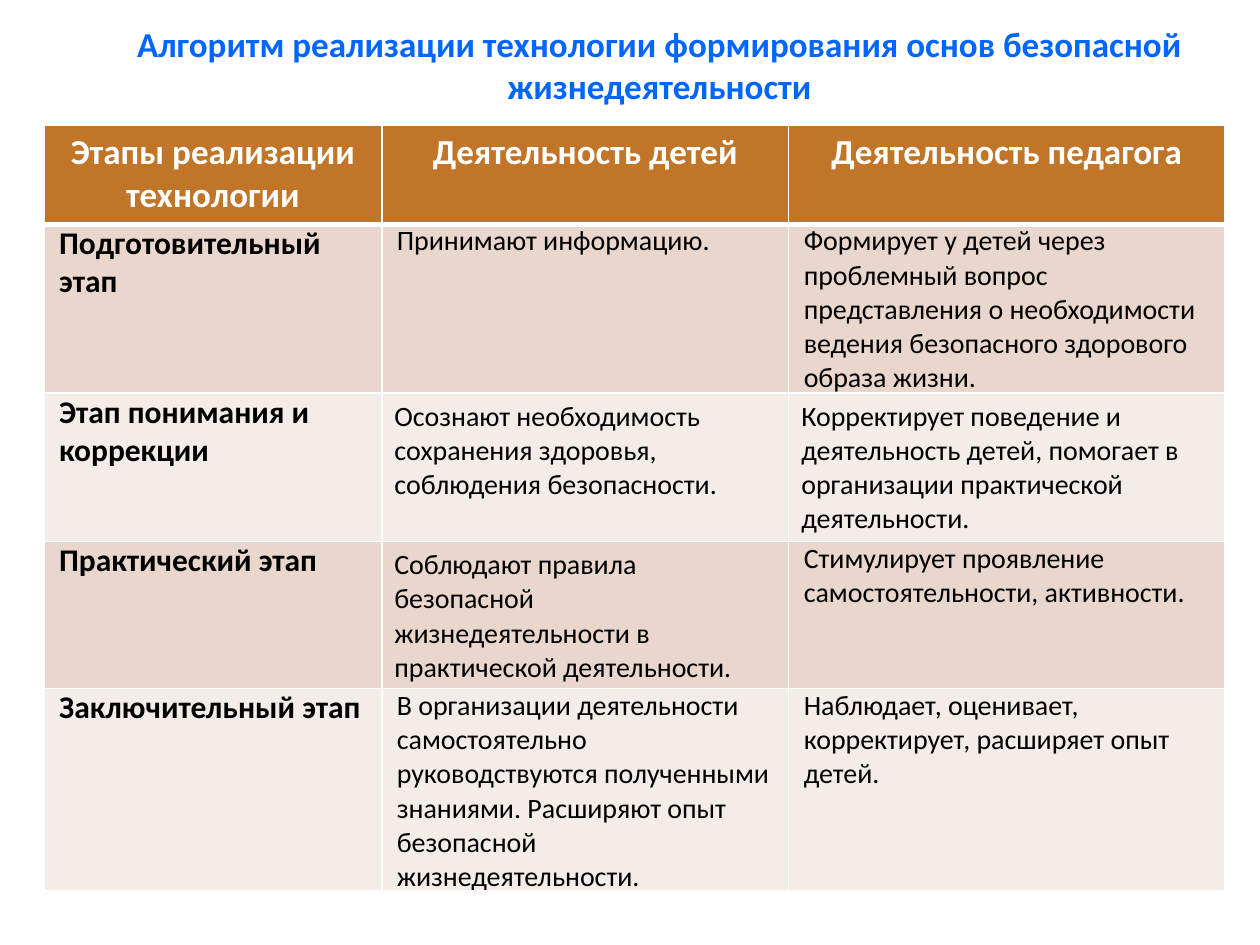
import dataclasses

import pptx
import pptx.dml.color
import pptx.enum.text
import pptx.oxml
import pptx.oxml.ns
import pptx.util

Inches = pptx.util.Inches
Pt = pptx.util.Pt
Align = pptx.enum.text.PP_ALIGN

COLORS = {
    "title": "0066FF",
    "header": "C17529",
    "dark_band": "E9D6CD",
    "light_band": "F4ECE8",
    "white": "FFFFFF",
    "black": "000000",
}
FONT = "Calibri"
COLUMN_WIDTHS = [2.68, 3.23, 3.46]


@dataclasses.dataclass(frozen=True)
class TextStyle:
    size: int
    bold: bool
    color: str
    alignment: Align = Align.LEFT


@dataclasses.dataclass(frozen=True)
class Stage:
    height: float
    texts: tuple[str, str, str]
    default_margin_columns: tuple[int, ...] = ()


TITLE_STYLE = TextStyle(20, True, "title", Align.CENTER)
HEADER_STYLE = TextStyle(20, True, "white", Align.CENTER)
STAGE_STYLE = TextStyle(18, True, "black")
BODY_STYLE = TextStyle(16, False, "black")

ROWS = [
    Stage(0.79, ("Этапы реализации технологии", "Деятельность детей",
                 "Деятельность педагога"), (0, 1, 2)),
    Stage(1.34, ("Подготовительный этап", "Принимают информацию.",
                 "Формирует у детей через проблемный вопрос представления о "
                 "необходимости ведения безопасного здорового образа жизни.")),
    Stage(1.18, ("Этап понимания и коррекции",
                 "Осознают необходимость сохранения здоровья, соблюдения "
                 "безопасности.",
                 "Корректирует поведение и деятельность детей, помогает в "
                 "организации практической деятельности."), (1, 2)),
    Stage(1.16, ("Практический этап",
                 "Соблюдают правила безопасной жизнедеятельности в "
                 "практической деятельности.",
                 "Стимулирует проявление самостоятельности, активности."), (1,)),
    Stage(1.6, ("Заключительный этап",
                "В организации деятельности самостоятельно руководствуются "
                "полученными знаниями. Расширяют опыт безопасной "
                "жизнедеятельности.",
                "Наблюдает, оценивает, корректирует, расширяет опыт детей.")),
]


def rgb(name: str) -> pptx.dml.color.RGBColor:
    return pptx.dml.color.RGBColor.from_string(COLORS[name])


def write_text(text_frame, text: str, style: TextStyle) -> None:
    paragraph = text_frame.paragraphs[0]
    paragraph.alignment = style.alignment
    run = paragraph.add_run()
    run.text = text
    run.font.name = FONT
    run.font.size = Pt(style.size)
    run.font.bold = style.bold
    run.font.color.rgb = rgb(style.color)


def add_borders(cell, top: int, bottom: int) -> None:
    properties = cell._tc.get_or_add_tcPr()
    for side, width in (("L", 1), ("R", 1), ("T", top), ("B", bottom)):
        properties.append(pptx.oxml.parse_xml(
            f'<a:ln{side} {pptx.oxml.ns.nsdecls("a")} w="{Pt(width)}">'
            f'<a:solidFill><a:srgbClr val="{COLORS["white"]}"/></a:solidFill>'
            f'</a:ln{side}>'))


def style_cell(cell, row: int, column: int) -> None:
    stage = ROWS[row]
    add_borders(cell, 3 if row == 1 else 1, 3 if row == 0 else 1)
    if row == 0:
        fill, style = "header", HEADER_STYLE
    else:
        fill = "dark_band" if row % 2 else "light_band"
        style = BODY_STYLE if column else STAGE_STYLE
    cell.fill.solid()
    cell.fill.fore_color.rgb = rgb(fill)
    if column not in stage.default_margin_columns:
        cell.margin_left = cell.margin_right = Inches(0.12)
        cell.margin_top = cell.margin_bottom = Inches(0)
    write_text(cell.text_frame, stage.texts[column], style)


def add_title(slide) -> None:
    title = slide.shapes.add_textbox(
        Inches(0.59), Inches(0.13), Inches(9.29), Inches(0.77))
    title.text_frame.word_wrap = True
    title.text_frame.auto_size = pptx.enum.text.MSO_AUTO_SIZE.SHAPE_TO_FIT_TEXT
    write_text(
        title.text_frame,
        "Алгоритм реализации технологии формирования основ безопасной "
        "жизнедеятельности",
        TITLE_STYLE)


def add_stage_table(slide) -> None:
    table = slide.shapes.add_table(
        len(ROWS), len(COLUMN_WIDTHS), Inches(0.35), Inches(0.99),
        Inches(sum(COLUMN_WIDTHS)),
        Inches(sum(stage.height for stage in ROWS))).table
    for column, width in zip(table.columns, COLUMN_WIDTHS):
        column.width = Inches(width)
    for row_index, stage in enumerate(ROWS):
        table.rows[row_index].height = Inches(stage.height)
        for column_index in range(len(COLUMN_WIDTHS)):
            style_cell(table.cell(row_index, column_index),
                       row_index, column_index)


def main() -> None:
    presentation = pptx.Presentation()
    presentation.slide_width = Inches(10)
    presentation.slide_height = Inches(7.5)
    slide = presentation.slides.add_slide(presentation.slide_layouts[6])
    add_title(slide)
    add_stage_table(slide)
    presentation.save("out.pptx")


if __name__ == "__main__":
    main()
